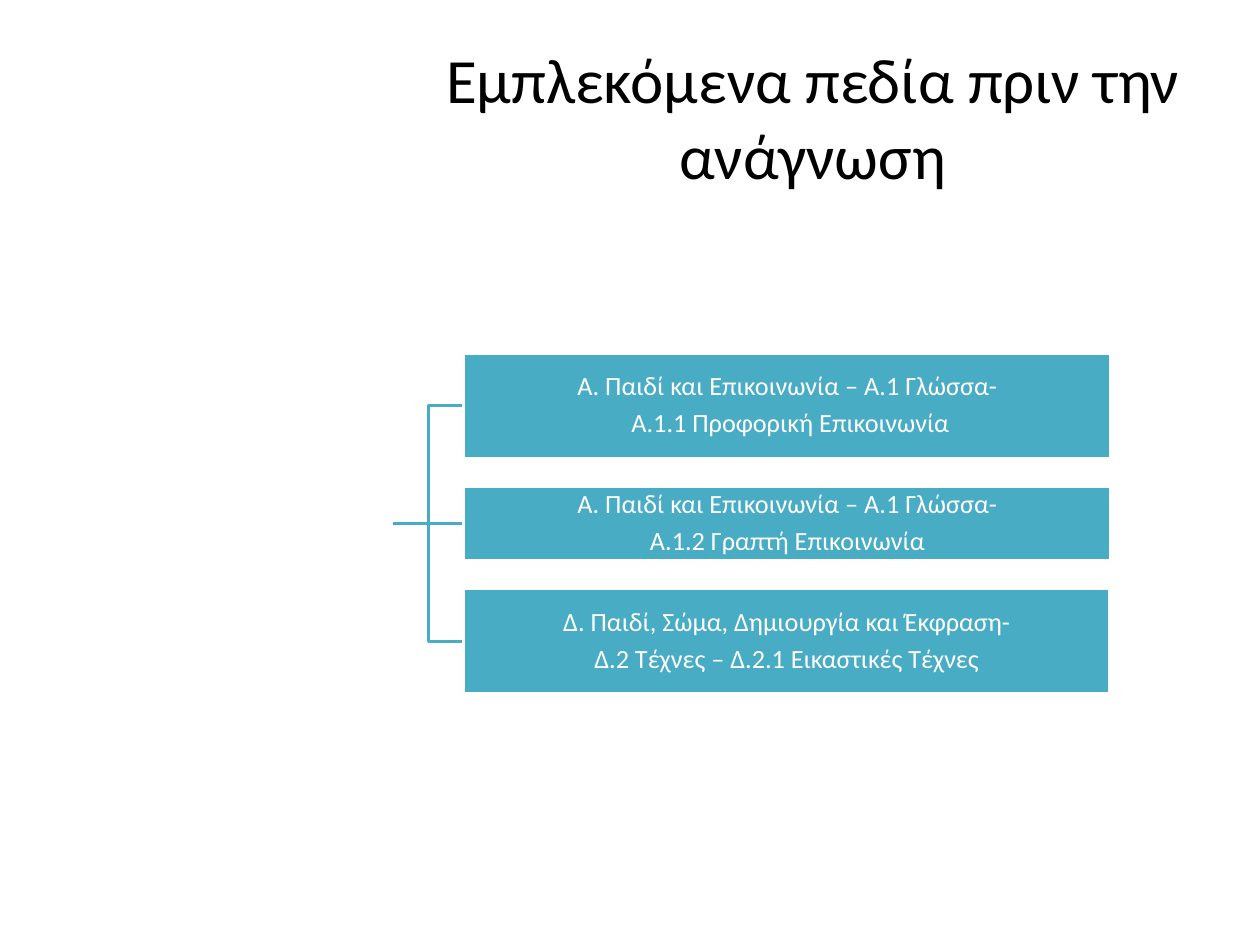
"""Build a slide listing the learning fields involved before reading."""
from dataclasses import dataclass

from lxml import etree
from pptx import Presentation
from pptx.dml.color import RGBColor
from pptx.enum.shapes import MSO_CONNECTOR, MSO_SHAPE
from pptx.enum.text import MSO_ANCHOR, PP_ALIGN
from pptx.oxml.ns import qn
from pptx.slide import Slide
from pptx.util import Inches, Pt

CENTER = PP_ALIGN.CENTER
MIDDLE = MSO_ANCHOR.MIDDLE
RECTANGLE = MSO_SHAPE.RECTANGLE
STRAIGHT = MSO_CONNECTOR.STRAIGHT


@dataclass(frozen=True)
class Theme:
    """Colours, font and type sizes."""
    accent: RGBColor = RGBColor(0x49, 0xAC, 0xC5)
    white: RGBColor = RGBColor(0xFF, 0xFF, 0xFF)
    black: RGBColor = RGBColor(0, 0, 0)
    font: str = "Calibri"
    title_size: Pt = Pt(36)
    field_size: Pt = Pt(15)
    line_width: Pt = Pt(2)


@dataclass(frozen=True)
class Field:
    """A field box: its two lines and its size in inches."""
    lines: tuple[str, str]
    height: float
    width: float = 5.14


THEME = Theme()
TITLE = "Εμπλεκόμενα πεδία πριν την ανάγνωση"
FIELDS = (
    Field(("Α. Παιδί και Επικοινωνία – Α.1 Γλώσσα-",
           " Α.1.1 Προφορική Επικοινωνία"), 0.84),
    Field(("Α. Παιδί και Επικοινωνία – Α.1 Γλώσσα-",
           "Α.1.2 Γραπτή Επικοινωνία"), 0.59),
    Field(("Δ. Παιδί, Σώμα, Δημιουργία και Έκφραση-",
           "Δ.2 Τέχνες – Δ.2.1 Εικαστικές Τέχνες"), 0.84, 5.13),
)
ROOT_X, TRUNK_X, FIELD_X = 3.12, 3.4, 3.68
FIRST_TOP, GAP = 2.8, 0.22


def add_title(slide: Slide) -> None:
    """Add the heading in the right part of the title area."""
    box = slide.shapes.add_textbox(Inches(0.5), Inches(0.3), Inches(9), Inches(1.25))
    frame = box.text_frame
    frame.word_wrap = True
    frame.vertical_anchor = MIDDLE
    frame.margin_left = Inches(3)
    frame.text = TITLE
    paragraph = frame.paragraphs[0]
    paragraph.alignment = CENTER
    paragraph.font.name = THEME.font
    paragraph.font.size = THEME.title_size
    paragraph.font.color.rgb = THEME.black


def add_field(slide: Slide, field: Field, top: float) -> None:
    """Add one filled box with its two centred lines."""
    shape = slide.shapes.add_shape(
        RECTANGLE, Inches(FIELD_X), Inches(top), Inches(field.width), Inches(field.height))
    shape.shadow.inherit = False
    shape.fill.solid()
    shape.fill.fore_color.rgb = THEME.accent
    shape.line.color.rgb = THEME.white
    shape.line.width = THEME.line_width
    frame = shape.text_frame
    frame.word_wrap = True
    frame.vertical_anchor = MIDDLE
    frame.margin_left = frame.margin_right = Inches(0.01)
    frame.margin_top = frame.margin_bottom = Inches(0.01)
    frame.text = "\n".join(field.lines)
    for index, paragraph in enumerate(frame.paragraphs):
        paragraph.alignment = CENTER
        paragraph.line_spacing = 0.9
        paragraph.space_before = Pt(5.2 if index else 0)
        paragraph.font.name = THEME.font
        paragraph.font.size = THEME.field_size
        paragraph.font.color.rgb = THEME.white


def add_branch(slide: Slide, root_y: float, field_y: float) -> None:
    """Add the line from the root to a field, bent where the heights differ."""
    start_x, end_x = Inches(ROOT_X), Inches(FIELD_X)
    start_y, end_y = Inches(root_y), Inches(field_y)
    if start_y == end_y:
        branch = slide.shapes.add_connector(STRAIGHT, start_x, start_y, end_x, end_y)
        etree.SubElement(branch._element.spPr, qn("a:effectLst"))
    else:
        trunk_x = Inches(TRUNK_X)
        builder = slide.shapes.build_freeform(start_x, start_y)
        builder.add_line_segments(
            [(trunk_x, start_y), (trunk_x, end_y), (end_x, end_y)], close=False)
        branch = builder.convert_to_shape()
        branch.shadow.inherit = False
        branch.fill.background()
    branch.line.color.rgb = THEME.accent
    branch.line.width = THEME.line_width


def main() -> None:
    """Build and save the presentation."""
    presentation = Presentation()
    presentation.slide_width = Inches(10)
    presentation.slide_height = Inches(7.5)
    slide = presentation.slides.add_slide(presentation.slide_layouts[6])
    add_title(slide)
    tops = [FIRST_TOP + sum(field.height + GAP for field in FIELDS[:index])
            for index in range(len(FIELDS))]
    middles = [top + field.height / 2 for top, field in zip(tops, FIELDS)]
    for middle in reversed(middles):
        add_branch(slide, middles[1], middle)
    for field, top in zip(FIELDS, tops):
        add_field(slide, field, top)
    presentation.save("out.pptx")


if __name__ == "__main__":
    main()
